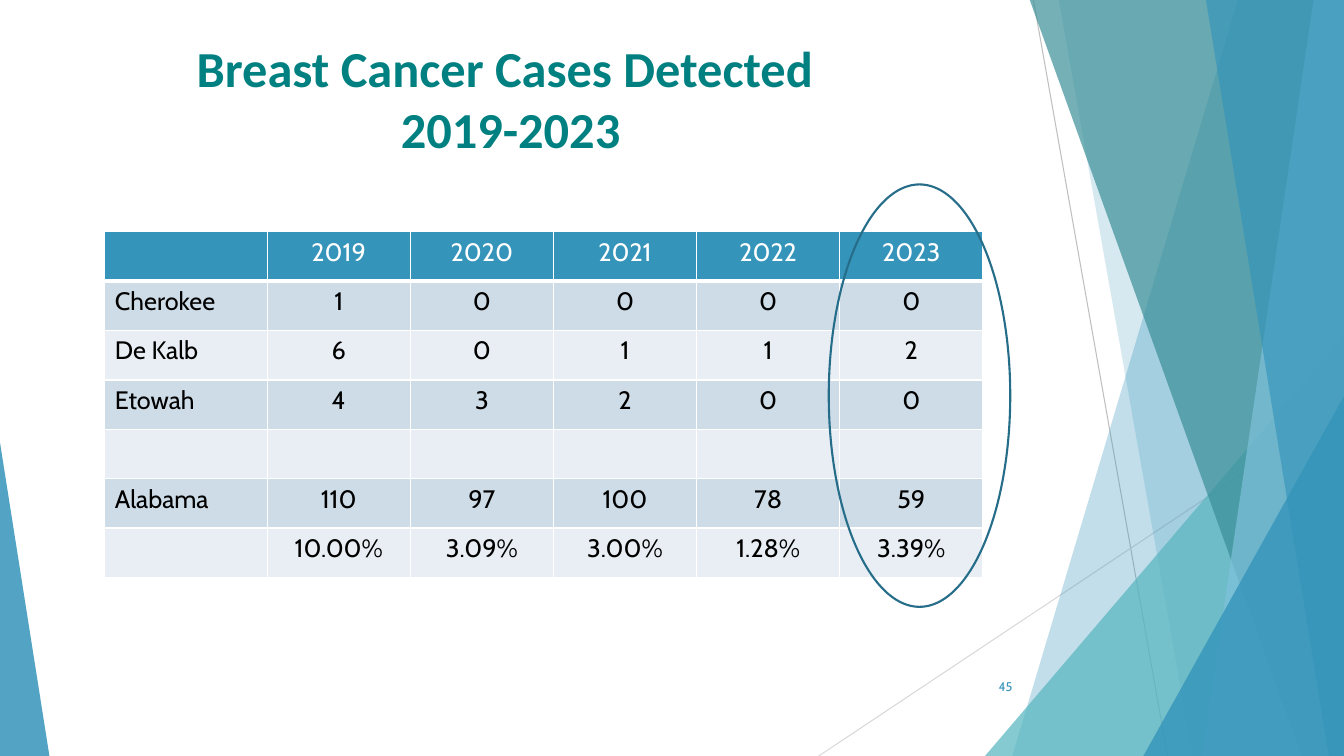
from dataclasses import dataclass
from pptx import Presentation
from pptx.dml.color import RGBColor
from pptx.enum import shapes, text
from pptx.oxml import parse_xml
from pptx.oxml.ns import nsdecls, qn
from pptx.util import Inches, Pt

TITLE = "Breast Cancer Cases Detected \v2019-2023"
PAGE = "45"
CASES = [
    ("", "2019", "2020", "2021", "2022", "2023"),
    ("Cherokee", "1", "0", "0", "0", "0"),
    ("De Kalb", "6", "0", "1", "1", "2"),
    ("Etowah", "4", "3", "2", "0", "0"),
    ("", "", "", "", "", ""),
    ("Alabama", "110", "97", "100", "78", "59"),
    ("", "10.00%", "3.09%", "3.00%", "1.28%", "3.39%"),
]
RAYS = [
    ((10.25, 0), (11.58, 7.5), "BFBFBF"),
    ((13.33, 4.03), (8.12, 7.5), "D9D9D9"),
]
# fmt: off
FACETS = [
    ("band", (12.28, 10.04), "3494BA", 30),
    ("band", (10.5, 11.83), "3494BA", 20),
    ("triangle", (9.77, 3.33, 3.56, 4.17, 1), "58B6C0", 72),
    ("band", (10.21, 12.91), "3A8F98", 70),
    ("band", (13.03, 11.92), "7FC1DB", 70),
    ("band", (11.96, 13.18), "3494BA", 65),
    ("triangle", (11.34, 3.93, 1.99, 3.57, 1), "3494BA", 80),
    ("triangle", (0, 4.39, 0.49, 3.11, 0), "3494BA", 85),
]


@dataclass(frozen=True)
class Theme:
    title: str = "008080"
    accent: str = "3494BA"
    ring: str = "266D8A"
    white: str = "FFFFFF"
    black: str = "000000"
    odd_row: str = "CEDCE7"
    even_row: str = "E8EEF3"
    title_font: str = "Calibri"
    body_font: str = "Cabin"
    title_size: int = 36
    table_size: int = 18
    page_size: int = 9


THEME = Theme()
WIDTH, HEIGHT = 13.33, 7.5
BLEED = -0.01
ALIGN = text.PP_ALIGN


def box(*lengths):
    return [Inches(n) for n in lengths]


def style(p, font, size, color, align, bold=False):
    p.alignment = align
    p.font.name, p.font.size, p.font.bold = font, Pt(size), bold
    p.font.color.rgb = RGBColor.from_string(color)


def paint(fill, color, opacity=100):
    fill.solid()
    fill.fore_color.rgb = RGBColor.from_string(color)
    if opacity < 100:
        clr = fill._xPr.find(qn("a:solidFill"))[0]
        clr.append(parse_xml(f'<a:alpha {nsdecls("a")} val="{opacity * 1000}"/>'))


def add_ray(slide, start, end, color):
    line = slide.shapes.add_connector(shapes.MSO_CONNECTOR.STRAIGHT, *box(*start, *end))
    line.line.color.rgb = RGBColor.from_string(color)
    line.line.width = Pt(0.75)
    line._element.spPr.append(parse_xml(f'<a:effectLst {nsdecls("a")}/>'))


def add_facet(slide, kind, geometry, color, opacity):
    if kind == "band":
        top_x, bottom_x = geometry
        builder = slide.shapes.build_freeform(*box(top_x, BLEED), scale=1.0)
        corners = [(WIDTH, BLEED), (WIDTH, HEIGHT), (bottom_x, HEIGHT)]
        builder.add_line_segments([box(*c) for c in corners], close=True)
        sp = builder.convert_to_shape()
    else:
        *place, apex = geometry
        sp = slide.shapes.add_shape(shapes.MSO_SHAPE.ISOSCELES_TRIANGLE, *box(*place))
        sp.adjustments[0] = apex
    sp.shadow.inherit = False
    sp.line.fill.background()
    paint(sp.fill, color, opacity)


def add_borders(cell, bottom):
    tcPr = cell._tc.get_or_add_tcPr()
    for i, (side, width) in enumerate([("L", 1), ("R", 1), ("T", 1), ("B", bottom)]):
        tcPr.insert(i, parse_xml(
            f'<a:ln{side} {nsdecls("a")} w="{Pt(width)}"><a:solidFill>'
            f'<a:srgbClr val="{THEME.white}"/></a:solidFill></a:ln{side}>'))


def add_cases(slide):
    frame = slide.shapes.add_table(len(CASES), len(CASES[0]), *box(1.04, 2.3, 8.73, 3.41))
    table = frame.table
    for i, col in enumerate(table.columns):
        col.width = Inches(1.42 if i else 1.61)
    for r, values in enumerate(CASES):
        table.rows[r].height = Inches(0.49)
        row_fill = (THEME.odd_row if r % 2 else THEME.even_row) if r else THEME.accent
        for c, value in enumerate(values):
            cell = table.cell(r, c)
            cell.text = value
            paint(cell.fill, row_fill)
            add_borders(cell, 1 if r else 3)
            style(cell.text_frame.paragraphs[0], THEME.body_font, THEME.table_size,
                  THEME.black if r else THEME.white, ALIGN.CENTER if c else ALIGN.LEFT)


def add_title(slide):
    sp = slide.shapes.title
    sp.left, sp.top, sp.width, sp.height = box(-0.02, 0.32, 10.17, 1.5)
    tf = sp.text_frame
    tf.text = TITLE
    tf.vertical_anchor = text.MSO_ANCHOR.TOP
    style(tf.paragraphs[0], THEME.title_font, THEME.title_size, THEME.title, ALIGN.CENTER, True)


def add_page_number(slide):
    tf = slide.shapes.add_textbox(*box(9.39, 6.61, 0.75, 0.4)).text_frame
    tf.word_wrap = True
    tf.vertical_anchor = text.MSO_ANCHOR.MIDDLE
    tf.text = PAGE
    style(tf.paragraphs[0], THEME.body_font, THEME.page_size, THEME.accent, ALIGN.RIGHT)


def add_ring(slide):
    sp = slide.shapes.add_shape(shapes.MSO_SHAPE.OVAL, *box(8.22, 1.83, 1.8, 4.19))
    sp.shadow.inherit = False
    sp.fill.background()
    sp.line.color.rgb = RGBColor.from_string(THEME.ring)
    sp.line.width = Pt(1.5)


def main():
    """Build the slide of breast cancer cases by county and year."""
    prs = Presentation()
    prs.slide_width, prs.slide_height = box(WIDTH, HEIGHT)
    slide = prs.slides.add_slide(prs.slide_layouts[5])
    for ray in RAYS:
        add_ray(slide, *ray)
    for facet in FACETS:
        add_facet(slide, *facet)
    add_title(slide)
    add_page_number(slide)
    add_cases(slide)
    add_ring(slide)
    prs.save("out.pptx")


if __name__ == "__main__":
    main()
